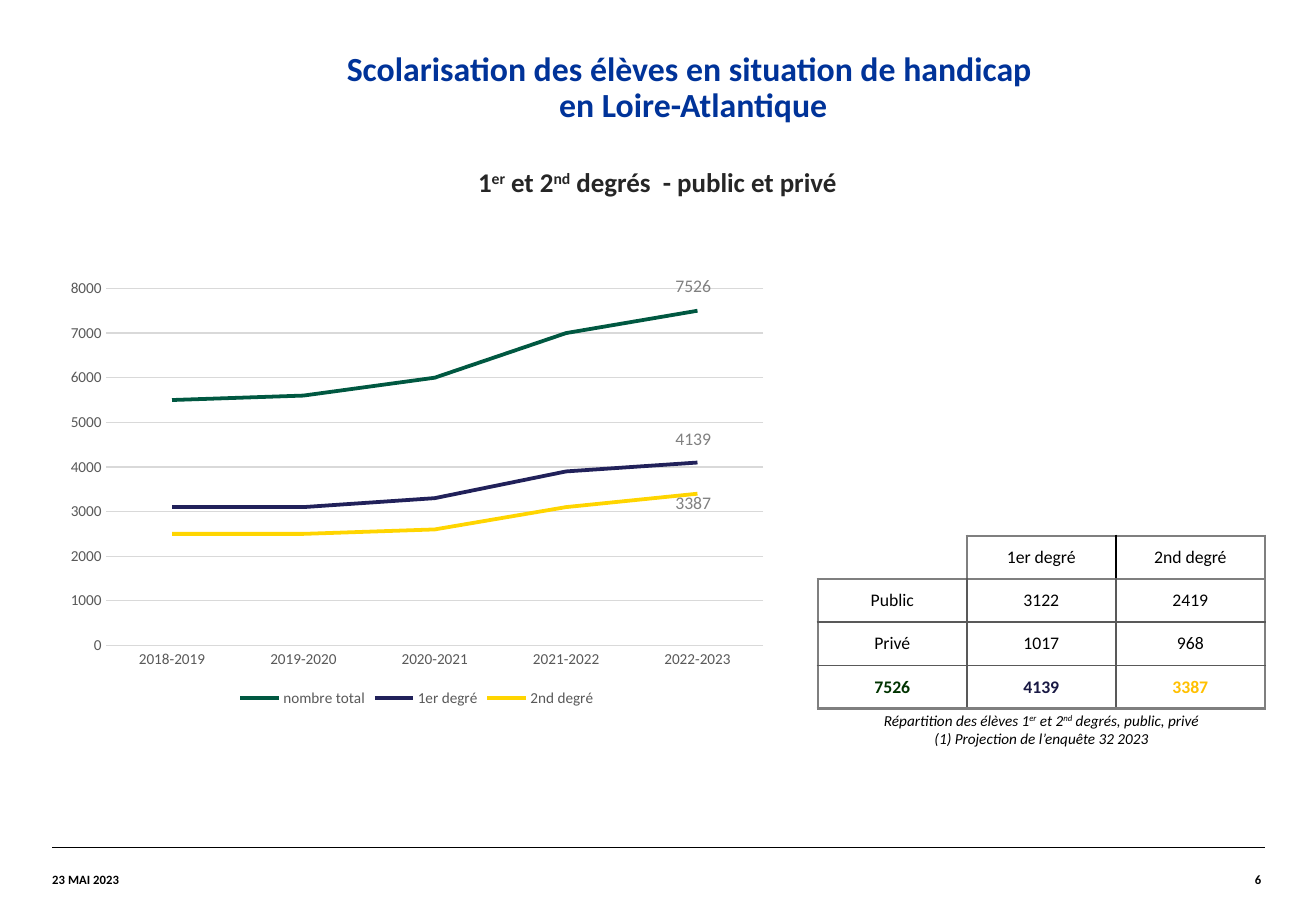
"""Build the slide on the schooling of disabled pupils in Loire-Atlantique."""
from lxml import etree
from pptx import Presentation
from pptx.chart.data import CategoryChartData
from pptx.dml.color import RGBColor
from pptx.enum.chart import XL_CHART_TYPE, XL_LEGEND_POSITION, XL_TICK_MARK
from pptx.enum.shapes import MSO_CONNECTOR
from pptx.enum.text import MSO_ANCHOR, PP_ALIGN
from pptx.oxml import parse_xml
from pptx.oxml.ns import nsdecls, qn
from pptx.util import Inches, Pt

LEFT, CENTER, RIGHT = PP_ALIGN.LEFT, PP_ALIGN.CENTER, PP_ALIGN.RIGHT
TOP, MIDDLE = MSO_ANCHOR.TOP, MSO_ANCHOR.MIDDLE
NO_TICK = XL_TICK_MARK.NONE
LINE_CHART, LEGEND_BOTTOM = XL_CHART_TYPE.LINE, XL_LEGEND_POSITION.BOTTOM
STRAIGHT = MSO_CONNECTOR.STRAIGHT
FONT = "Calibri"


def color(value):
    return RGBColor.from_string(value)


def write(para, text, size, shade, bold=False, italic=False, align=CENTER):
    """Fill a paragraph; text between carets is set as superscript."""
    pieces = text.split("^")
    para.text = pieces[0]
    for index, piece in enumerate(pieces[1:], 1):
        span = para.add_run()
        span.text = piece
        if index % 2:
            span._r.get_or_add_rPr().set("baseline", "30000")
    para.alignment = align
    font = para.font
    font.name, font.size, font.bold, font.italic = FONT, Pt(size), bold, italic
    font.color.rgb = color(shade)


deck = Presentation()
deck.slide_width, deck.slide_height = Inches(10.83), Inches(7.5)
page = deck.slides.add_slide(deck.slide_layouts[6])
shapes = page.shapes

footer_rule = shapes.add_connector(
    STRAIGHT, Inches(0.43), Inches(6.98), Inches(10.41), Inches(6.98))
footer_rule.line.color.rgb = color("000000")
footer_rule.line.width = Pt(0.8)
etree.SubElement(footer_rule._element.spPr, qn("a:effectLst"))

enrolment = CategoryChartData()
enrolment.categories = ["2018-2019", "2019-2020", "2020-2021", "2021-2022", "2022-2023"]
curves = [
    ("nombre total", [5500, 5600, 6000, 7000, 7500], "005841"),
    ("1er degré", [3100, 3100, 3300, 3900, 4100], "21215A"),
    ("2nd degré", [2500, 2500, 2600, 3100, 3400], "FFD500"),
]
for name, values, shade in curves:
    enrolment.add_series(name, values)
chart = shapes.add_chart(
    LINE_CHART, Inches(0.46), Inches(2.23), Inches(5.94), Inches(3.63), enrolment).chart
chart.has_title = False
chart.font.name, chart.font.size = FONT, Pt(9)
chart.font.color.rgb = color("595959")
chart.has_legend = True
chart.legend.position = LEGEND_BOTTOM
chart.legend.include_in_layout = False
chart.plots[0].vary_by_categories = False
for series, (name, values, shade) in zip(chart.plots[0].series, curves):
    series.smooth = False
    series.format.line.color.rgb = color(shade)
    series.format.line.width = Pt(2.25)

years, pupils = chart.category_axis, chart.value_axis
for axis in (years, pupils):
    axis.major_tick_mark = axis.minor_tick_mark = NO_TICK
pupils.minimum_scale, pupils.maximum_scale, pupils.major_unit = 0, 8000, 1000
pupils.has_major_gridlines = True
pupils.format.line.fill.background()
for line in (years.format.line, pupils.major_gridlines.format.line):
    line.color.rgb = color("D9D9D9")
    line.width = Pt(0.75)

plot_area = chart._chartSpace.chart.plotArea
for layout in plot_area.findall(qn("c:layout")):
    plot_area.remove(layout)
plot_area.insert(0, parse_xml(
    f'<c:layout {nsdecls("c")}><c:manualLayout><c:layoutTarget val="inner"/>'
    '<c:xMode val="edge"/><c:yMode val="edge"/><c:x val="0.07"/><c:y val="0.04"/>'
    '<c:w val="0.91"/><c:h val="0.81"/></c:manualLayout></c:layout>'))

texts = [
    (1.57, 0.43, 8.27, 0.74, TOP, CENTER, 20, "003399", True,
     "Scolarisation des élèves en situation de handicap \ven Loire-Atlantique"),
    (2.44, 1.36, 5.94, 0.37, TOP, CENTER, 16, "262626", True,
     "1^er^ et 2^nd^ degrés  - public et privé"),
    (5.47, 2.26, 0.47, 0.27, TOP, CENTER, 10.5, "808080", False, "7526"),
    (5.47, 3.52, 0.47, 0.27, TOP, CENTER, 10.5, "808080", False, "4139"),
    (5.47, 4.05, 0.47, 0.27, TOP, CENTER, 10.5, "808080", False, "3387"),
    (0.43, 6.98, 6.99, 0.52, MIDDLE, LEFT, 7.5, "000000", True, "23 MAI 2023"),
    (8.78, 6.98, 1.6, 0.52, MIDDLE, RIGHT, 7.5, "000000", True, "6"),
]
for left, top, width, height, anchor, align, size, shade, bold, text in texts:
    box = shapes.add_textbox(Inches(left), Inches(top), Inches(width), Inches(height))
    frame = box.text_frame
    frame.word_wrap = True
    frame.vertical_anchor = anchor
    frame.margin_left = frame.margin_right = frame.margin_top = frame.margin_bottom = 0
    write(frame.paragraphs[0], text, size, shade, bold, align=align)
    if size == 20:
        frame.paragraphs[0].line_spacing = 0.9

rows = [
    ["", "1er degré", "2nd degré"],
    ["Public", "3122", "2419"],
    ["Privé", "1017", "968"],
    ["7526", "4139", "3387"],
    ["Répartition des élèves 1^er^ et 2^nd^ degrés, public, privé", "", ""],
]
total_shades = ["003300", "191944", "FFC000"]
none, heavy, thin, black = None, ("7F7F7F", 1.5), ("595959", 1), ("000000", 1)
body_edges = [heavy, thin, thin, heavy]
upright_edges = [[none, heavy, black, heavy]] + [body_edges] * 3 + [[none] * 4]
level_edges = [[none, heavy, heavy], [heavy] * 3, [thin] * 3, [thin] * 3, [heavy] * 3, [none] * 3]

table = shapes.add_table(5, 3, Inches(6.73), Inches(4.41), Inches(3.68), Inches(1.78)).table
table.first_row = table.horz_banding = False
for row, labels in enumerate(rows):
    table.rows[row].height = Inches(1.78 / 5)
    for column, label in enumerate(labels):
        cell = table.cell(row, column)
        cell.fill.background()
        cell.vertical_anchor = MIDDLE
        cell.margin_left = cell.margin_right = Inches(0.05)
        cell.margin_top = cell.margin_bottom = 0
        total, caption = row == 3, row == 4
        write(cell.text_frame.paragraphs[0], label, 9 if caption else 10.5,
              total_shades[column] if total else "000000", total, caption)
        sides = [("L", upright_edges[row][column]), ("R", upright_edges[row][column + 1]),
                 ("T", level_edges[row][column]), ("B", level_edges[row + 1][column])]
        for place, (side, edge) in enumerate(sides):
            width = int(Pt(edge[1])) if edge else 0
            paint = (f'<a:solidFill><a:srgbClr val="{edge[0]}"/></a:solidFill>'
                     if edge else "<a:noFill/>")
            cell._tc.tcPr.insert(place, parse_xml(
                f'<a:ln{side} {nsdecls("a")} w="{width}">{paint}</a:ln{side}>'))
caption_cell = table.cell(4, 0)
caption_cell.merge(table.cell(4, 2))
write(caption_cell.text_frame.add_paragraph(), "(1) Projection de l’enquête 32 2023",
      9, "000000", italic=True)

deck.save("out.pptx")
